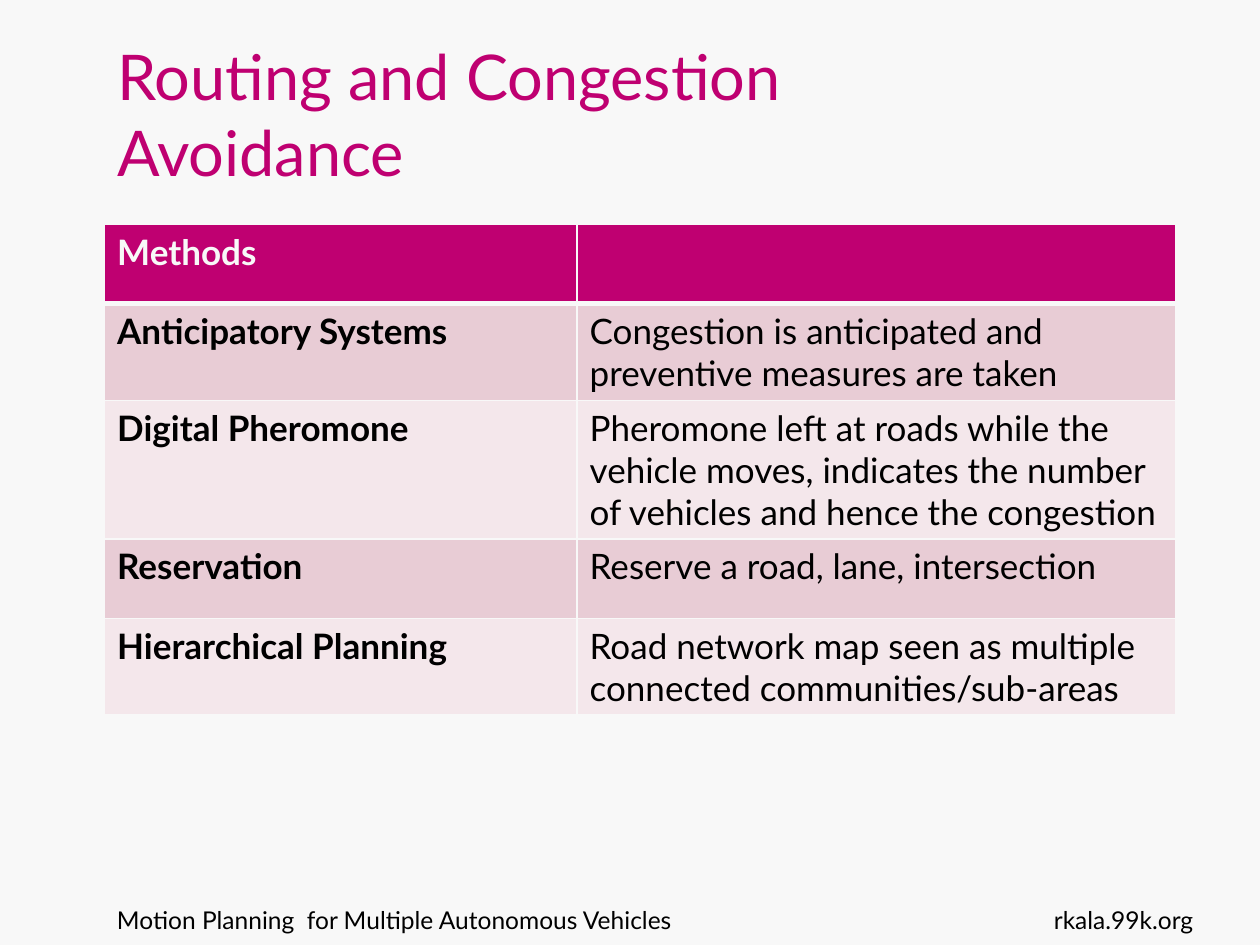
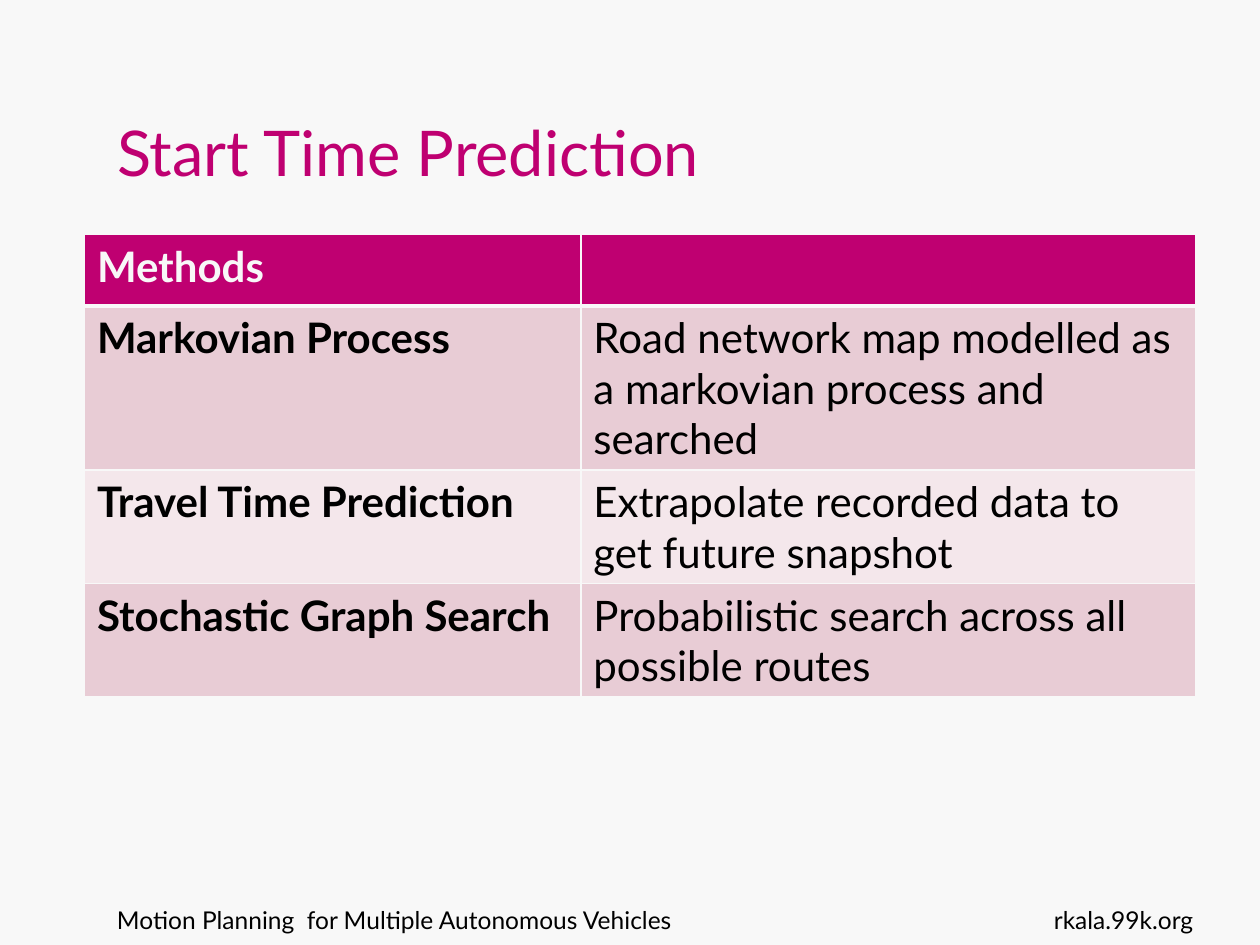
from pptx import Presentation
from pptx.dml.color import RGBColor
from pptx.enum.text import MSO_ANCHOR, MSO_AUTO_SIZE, PP_ALIGN
from pptx.oxml import parse_xml
from pptx.oxml.ns import nsdecls
from pptx.util import Inches, Pt

MAGENTA = RGBColor(0xBF, 0x00, 0x71)
PAPER = RGBColor(0xF8, 0xF8, 0xF8)
INK = RGBColor(0x00, 0x00, 0x00)
BANDS = (RGBColor(0xE8, 0xCC, 0xD5), RGBColor(0xF4, 0xE7, 0xEB))
FONT = "Lato"
TITLE_ONLY = 5


def write_text(frame, text, size, color=INK, bold=False, align=PP_ALIGN.LEFT):
    para = frame.paragraphs[0]
    para.alignment = align
    span = para.add_run()
    span.text = text
    span.font.name = FONT
    span.font.size = Pt(size)
    span.font.bold = bold
    span.font.color.rgb = color


def set_borders(cell, top, bottom):
    properties = cell._tc.get_or_add_tcPr()
    widths = {"lnL": 1, "lnR": 1, "lnT": top, "lnB": bottom}
    for position, (side, width) in enumerate(widths.items()):
        line = parse_xml(
            f'<a:{side} {nsdecls("a")} w="{Pt(width)}"><a:solidFill>'
            f'<a:srgbClr val="{PAPER}"/></a:solidFill></a:{side}>'
        )
        properties.insert(position, line)


class MethodDeck:
    def __init__(self):
        self.deck = Presentation()
        self.deck.slide_width = Inches(10)
        self.deck.slide_height = Inches(7.5)
        background = self.deck.slide_master.background.fill
        background.solid()
        background.fore_color.rgb = PAPER
        self.page = None

    def add_page(self, title):
        layout = self.deck.slide_layouts[TITLE_ONLY]
        self.page = self.deck.slides.add_slide(layout)
        self.add_title(title)
        self.add_footer("Motion Planning  for Multiple Autonomous Vehicles", 0.83, 6.93)
        self.add_footer("rkala.99k.org", 8.07, 1.5, align=PP_ALIGN.RIGHT)

    def add_title(self, text):
        box = self.page.shapes.title
        box.left, box.top = Inches(0.83), Inches(0.3)
        box.width, box.height = Inches(6.77), Inches(1.25)
        frame = box.text_frame
        frame.word_wrap = True
        frame.auto_size = MSO_AUTO_SIZE.NONE
        frame.vertical_anchor = MSO_ANCHOR.BOTTOM
        write_text(frame, text, 36, color=MAGENTA)

    def add_footer(self, text, left, width, align=PP_ALIGN.LEFT):
        box = self.page.shapes.add_textbox(
            Inches(left), Inches(7.13), Inches(width), Inches(0.52)
        )
        box.text_frame.word_wrap = True
        write_text(box.text_frame, text, 14, align=align)

    def add_methods(self, methods, left, top, columns, row_height, size):
        rows = [("Methods", ""), *methods]
        table = self.page.shapes.add_table(
            len(rows), len(columns), Inches(left), Inches(top),
            Inches(sum(columns)), Inches(row_height * len(rows)),
        ).table
        for column, width in zip(table.columns, columns):
            column.width = Inches(width)
        for row_index, row in enumerate(rows):
            header = row_index == 0
            for column_index, text in enumerate(row):
                cell = table.cell(row_index, column_index)
                cell.fill.solid()
                cell.fill.fore_color.rgb = MAGENTA if header else BANDS[(row_index - 1) % 2]
                set_borders(cell, top=3 if row_index == 1 else 1, bottom=3 if header else 1)
                if text:
                    write_text(cell.text_frame, text, size,
                               color=PAPER if header else INK,
                               bold=header or column_index == 0)


def main():
    slides = MethodDeck()

    slides.add_page("Routing and Congestion Avoidance")
    slides.add_methods(
        [
            ("Anticipatory Systems",
             "Congestion is anticipated and preventive measures are taken"),
            ("Digital Pheromone",
             "Pheromone left at roads while the vehicle moves, indicates "
             "the number of vehicles and hence the congestion"),
            ("Reservation", "Reserve a road, lane, intersection"),
            ("Hierarchical Planning",
             "Road network map seen as multiple connected communities/sub-areas"),
        ],
        left=0.83, top=1.78, columns=(3.75, 4.75), row_height=0.63, size=20,
    )

    slides.add_page("Start Time Prediction")
    slides.add_methods(
        [
            ("Markovian Process",
             "Road network map modelled as a markovian process and searched"),
            ("Travel Time Prediction",
             "Extrapolate recorded data to get future snapshot"),
            ("Stochastic Graph Search",
             "Probabilistic search across all possible routes"),
        ],
        left=0.67, top=1.86, columns=(3.94, 4.88), row_height=0.57, size=24,
    )

    slides.deck.save("out.pptx")


if __name__ == "__main__":
    main()
